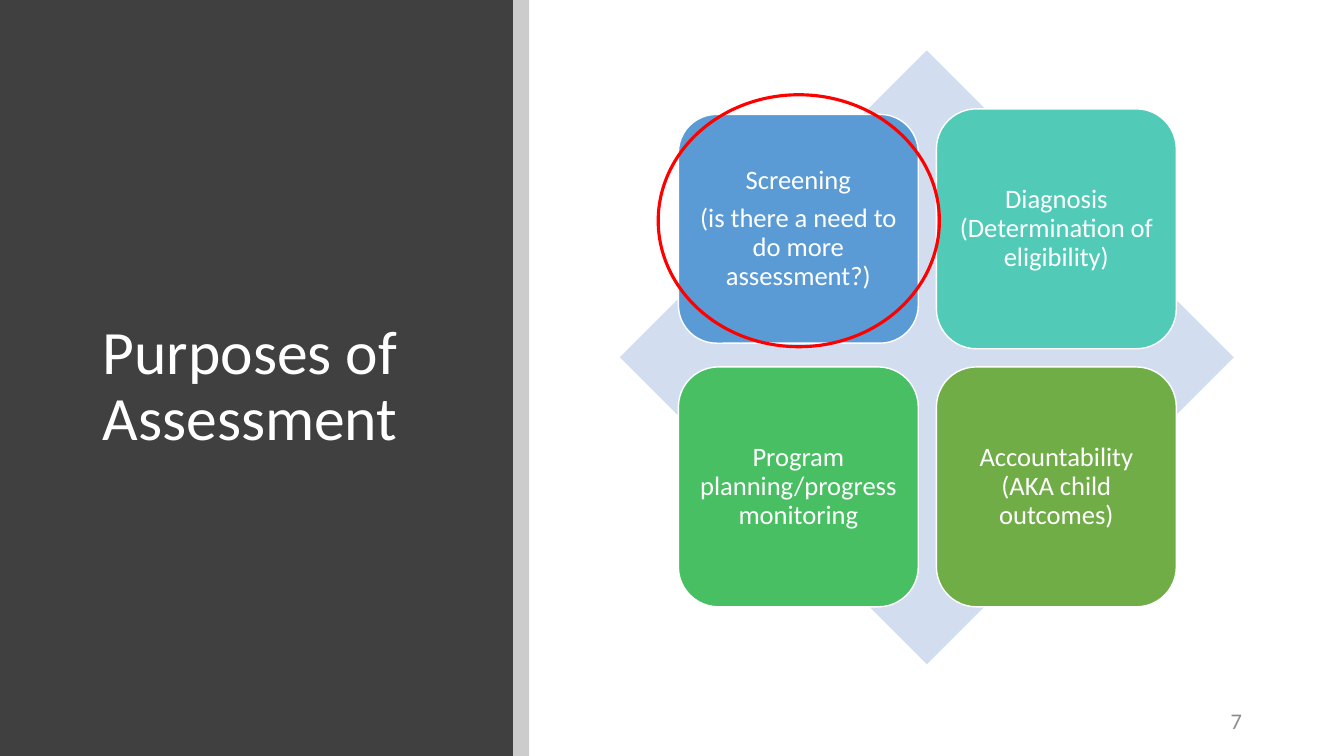
from dataclasses import dataclass
from typing import Optional

from lxml.etree import SubElement
from pptx import Presentation
from pptx.dml.color import RGBColor
from pptx.enum.shapes import MSO_SHAPE as Shape
from pptx.enum.text import MSO_ANCHOR as Anchor, PP_ALIGN as Align
from pptx.oxml.ns import qn
from pptx.util import Inches, Pt

COLS, ROWS = 40, 22.5
WIDTH, HEIGHT = Inches(13.333), Inches(7.5)
FONT = "Calibri"

WHITE = RGBColor(0xFF, 0xFF, 0xFF)
BLACK = RGBColor(0x00, 0x00, 0x00)
CHARCOAL = RGBColor(0x40, 0x40, 0x40)
GRAY = RGBColor(0x8C, 0x8C, 0x8C)
PALE_BLUE = RGBColor(0xD2, 0xDE, 0xEF)
BLUE = RGBColor(0x5B, 0x9B, 0xD5)
TEAL = RGBColor(0x52, 0xCA, 0xB8)
GREEN = RGBColor(0x49, 0xBF, 0x64)
OLIVE = RGBColor(0x70, 0xAD, 0x47)
RED = RGBColor(0xFF, 0x00, 0x00)

CARD_LEFT, CARD_TOP = 20.19, 3.24
CARD_SIZE, CARD_STEP = 7.14, 7.68


@dataclass(frozen=True)
class Box:
    col: float
    row: float
    cols: float
    rows: float

    def emu(self) -> tuple[int, int, int, int]:
        return (
            round(self.col * WIDTH / COLS),
            round(self.row * HEIGHT / ROWS),
            round(self.cols * WIDTH / COLS),
            round(self.rows * HEIGHT / ROWS),
        )


@dataclass(frozen=True)
class Style:
    size: float
    color: RGBColor
    align: Align
    spacing: float = 1.0
    after: float = 0


@dataclass(frozen=True)
class Card:
    col: int
    row: int
    color: RGBColor
    lines: tuple[str, ...]
    rows: float = CARD_SIZE

    def box(self) -> Box:
        top = CARD_TOP + self.row * CARD_STEP + (CARD_SIZE - self.rows) / 2
        return Box(CARD_LEFT + self.col * CARD_STEP, top, CARD_SIZE, self.rows)


TITLE = Style(44, WHITE, Align.LEFT, 0.9)
CARD_TEXT = Style(19, WHITE, Align.CENTER, 0.9, 6.65)
NUMBER = Style(16, GRAY, Align.RIGHT)

CARDS = (
    Card(0, 0, BLUE, ("Screening", "(is there a need to do more assessment?)"), 6.81),
    Card(1, 0, TEAL, ("Diagnosis (Determination of eligibility)",)),
    Card(0, 1, GREEN, ("Program planning/progress monitoring",)),
    Card(1, 1, OLIVE, ("Accountability (AKA child outcomes)",)),
)


def add_shape(slide, kind: Shape, box: Box, fill: Optional[RGBColor] = None,
              line: Optional[RGBColor] = None, weight: float = 1):
    sp = slide.shapes.add_shape(kind, *box.emu())
    sp.shadow.inherit = False
    if fill is None:
        sp.fill.background()
    else:
        sp.fill.solid()
        sp.fill.fore_color.rgb = fill
    if line is None:
        sp.line.fill.background()
    else:
        sp.line.color.rgb = line
        sp.line.width = Pt(weight)
    return sp


def set_opacity(sp, percent: int) -> None:
    color = sp.fill._xPr.find(qn("a:solidFill"))[0]
    SubElement(color, qn("a:alpha")).set("val", str(percent * 1000))


def write(tf, lines: tuple[str, ...], style: Style) -> None:
    tf.word_wrap = True
    tf.vertical_anchor = Anchor.MIDDLE
    for i, line in enumerate(lines):
        p = tf.add_paragraph() if i else tf.paragraphs[0]
        p.alignment = style.align
        p.line_spacing = style.spacing
        p.space_after = Pt(style.after)
        r = p.add_run()
        r.text = line
        r.font.name = FONT
        r.font.size = Pt(style.size)
        r.font.color.rgb = style.color


def add_text(slide, box: Box, text: str, style: Style) -> None:
    write(slide.shapes.add_textbox(*box.emu()).text_frame, (text,), style)


def add_card(slide, card: Card) -> None:
    sp = add_shape(slide, Shape.ROUNDED_RECTANGLE, card.box(), card.color, WHITE)
    tf = sp.text_frame
    tf.margin_left = tf.margin_right = Inches(0.08)
    tf.margin_top = tf.margin_bottom = Inches(0.08)
    write(tf, card.lines, CARD_TEXT)


def main() -> None:
    prs = Presentation()
    prs.slide_width, prs.slide_height = WIDTH, HEIGHT
    slide = prs.slides.add_slide(prs.slide_layouts[6])

    add_shape(slide, Shape.RECTANGLE, Box(0, 0, 15.27, ROWS), CHARCOAL)
    add_text(slide, Box(2.76, 2.67, 10.95, 17.73), "Purposes of Assessment", TITLE)
    strip = add_shape(slide, Shape.RECTANGLE, Box(15.27, 0, 0.48, ROWS), BLACK)
    set_opacity(strip, 20)

    add_shape(slide, Shape.DIAMOND, Box(18.45, 1.5, 18.27, 18.27), PALE_BLUE)
    for card in CARDS:
        add_card(slide, card)
    add_shape(slide, Shape.OVAL, Box(19.59, 2.82, 8.37, 7.5), line=RED, weight=2.25)
    add_text(slide, Box(28.26, 20.85, 9, 1.2), "7", NUMBER)

    prs.save("out.pptx")


if __name__ == "__main__":
    main()
